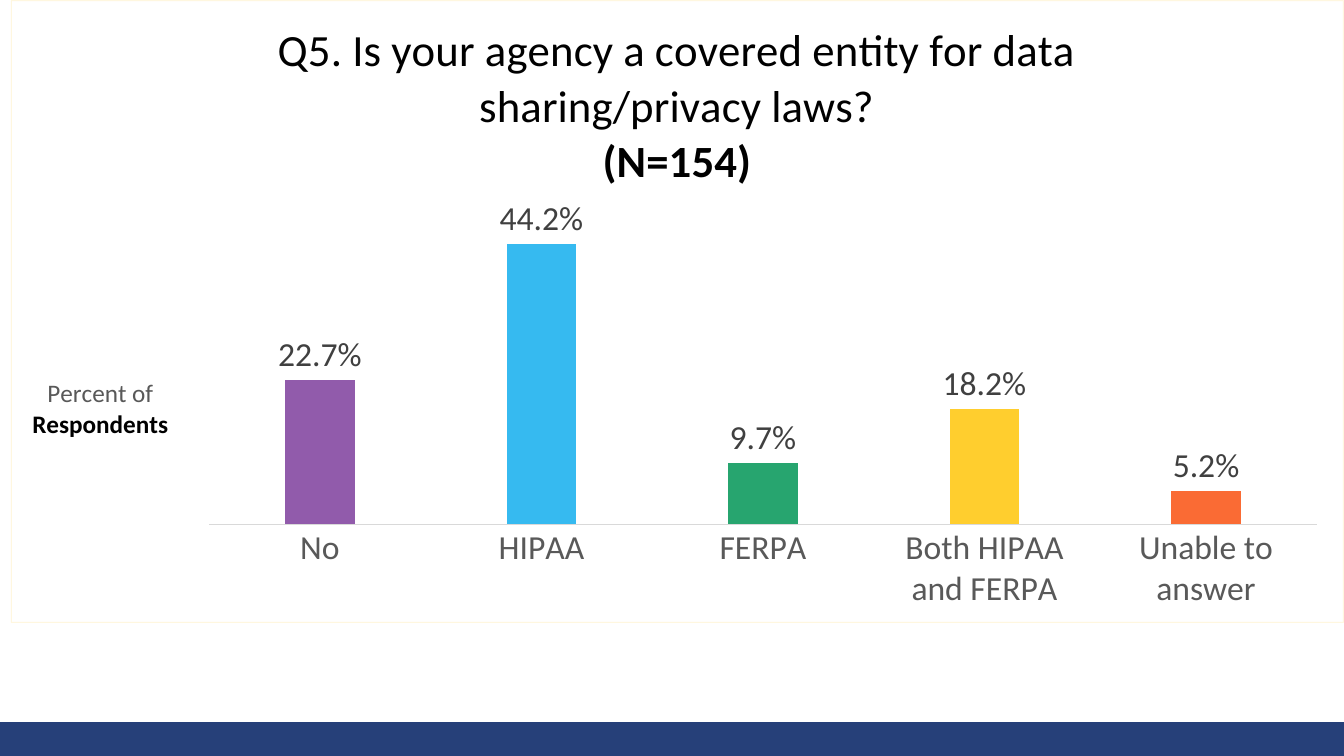
from lxml import etree
from pptx import Presentation
from pptx.chart.data import CategoryChartData
from pptx.dml.color import RGBColor
from pptx.enum.chart import XL_CHART_TYPE, XL_LABEL_POSITION, XL_TICK_MARK
from pptx.enum.shapes import MSO_SHAPE
from pptx.enum.text import PP_ALIGN
from pptx.oxml import parse_xml
from pptx.oxml.ns import nsdecls, qn
from pptx.util import Inches, Pt

COLUMN = XL_CHART_TYPE.COLUMN_CLUSTERED
OUTSIDE = XL_LABEL_POSITION.OUTSIDE_END
NO_TICK = XL_TICK_MARK.NONE
RECT = MSO_SHAPE.RECTANGLE
CENTER = PP_ALIGN.CENTER

WIDTH, HEIGHT = 13.33, 7.5
FONT = "Calibri"
COLORS = {
    "black": "000000", "white": "FFFFFF", "navy": "264079",
    "label": "404040", "axis_text": "595959", "axis_line": "D9D9D9",
    "purple": "915BAB", "blue": "36BAF0", "green": "27A56F",
    "yellow": "FFCE2E", "orange": "FA6B34",
}
ANSWERS = [
    ("No", 0.227, "purple"),
    ("HIPAA", 0.442, "blue"),
    ("FERPA", 0.097, "green"),
    ("Both HIPAA and FERPA", 0.182, "yellow"),
    ("Unable to answer", 0.052, "orange"),
]


def rgb(name):
    return RGBColor.from_string(COLORS[name])


def set_font(font, size, color, bold=False):
    font.name, font.size, font.bold = FONT, Pt(size), bold
    font.color.rgb = rgb(color)


def add_text(tf, text, first=False, **fmt):
    """Write one centred paragraph, formatted by the set_font keywords."""
    p = tf.paragraphs[0] if first else tf.add_paragraph()
    p.alignment = CENTER
    r = p.add_run()
    r.text = text
    set_font(r.font, **fmt)


def place(element, index, **percents):
    """Give a chart part a manual layout in percent of the chart's size."""
    old = element.find(qn("c:layout"))
    if old is not None:
        element.remove(old)
    layout = parse_xml(f"<c:layout {nsdecls('c')}><c:manualLayout/></c:layout>")
    manual = layout[0]
    if "w" in percents:
        etree.SubElement(manual, qn("c:layoutTarget")).set("val", "inner")
    for side in ("x", "y"):
        etree.SubElement(manual, qn(f"c:{side}Mode")).set("val", "edge")
    for key, value in percents.items():
        etree.SubElement(manual, qn(f"c:{key}")).set("val", f"{value / 100:.4f}")
    element.insert(index, layout)


class Slide:
    """Holds the current slide; lengths are percent of the slide's size."""

    def __init__(self, prs):
        self.prs = prs
        self.s = prs.slides.add_slide(prs.slide_layouts[6])

    def box(self, x, y, w, h):
        pw, ph = self.prs.slide_width / 100, self.prs.slide_height / 100
        return int(x * pw), int(y * ph), int(w * pw), int(h * ph)

    def band(self, x, y, w, h, color):
        sp = self.s.shapes.add_shape(RECT, *self.box(x, y, w, h))
        sp.shadow.inherit = False
        sp.fill.solid()
        sp.fill.fore_color.rgb = rgb(color)
        sp.line.color.rgb = rgb(color)
        sp.line.width = Pt(1)

    def column_chart(self, x, y, w, h, answers):
        data = CategoryChartData(number_format="0.0%")
        data.categories = [name for name, _, _ in answers]
        data.add_series("Series 1", [value for _, value, _ in answers])
        frame = self.s.shapes.add_chart(COLUMN, *self.box(x, y, w, h), data)
        chart = frame.chart
        chart.has_legend = False
        set_font(chart.font, 10, "black")
        self.columns(chart.plots[0], answers)
        self.axes(chart)
        self.chart_frame(chart)
        return chart

    def columns(self, plot, answers):
        plot.gap_width, plot.overlap = 219, -27
        plot.vary_by_categories = False
        series = plot.series[0]
        series.format.fill.solid()
        series.format.fill.fore_color.rgb = rgb(answers[0][2])
        for i, (_, _, color) in enumerate(answers[1:], 1):
            fill = series.points[i].format.fill
            fill.solid()
            fill.fore_color.rgb = rgb(color)
        labels = series.data_labels
        labels.show_value = True
        labels.position = OUTSIDE
        labels.number_format = "0.0%"
        labels.number_format_is_linked = False
        set_font(labels.font, 24, "label")

    def axes(self, chart):
        cat, val = chart.category_axis, chart.value_axis
        cat.major_tick_mark = cat.minor_tick_mark = NO_TICK
        cat.format.line.color.rgb = rgb("axis_line")
        cat.format.line.width = Pt(0.75)
        set_font(cat.tick_labels.font, 24, "axis_text")
        val.has_major_gridlines = False
        val.minimum_scale, val.maximum_scale = 0, 0.5
        val.tick_labels.number_format = "0.0%"
        val.tick_labels.number_format_is_linked = False
        val.visible = False

    def chart_frame(self, chart):
        """Fill the chart area and give it a faint border."""
        area = parse_xml(
            f'<c:spPr {nsdecls("c", "a")}>'
            f'<a:solidFill><a:srgbClr val="{COLORS["white"]}"/></a:solidFill>'
            f'<a:ln w="{Pt(0.75)}"><a:solidFill><a:srgbClr val="{COLORS["yellow"]}">'
            '<a:alpha val="14000"/></a:srgbClr></a:solidFill></a:ln></c:spPr>')
        chart.element.find(qn("c:chart")).addnext(area)

    def chart_title(self, title, lines, x, y):
        """Write (text, format) lines into a chart or axis title."""
        for i, (text, fmt) in enumerate(lines):
            add_text(title.text_frame, text, first=i == 0, **fmt)
        body = next(title.element.iter(qn("a:bodyPr")))
        body.set("rot", "0")
        body.set("vert", "horz")
        place(title.element, 1, x=x, y=y)


def main():
    prs = Presentation()
    prs.slide_width, prs.slide_height = Inches(WIDTH), Inches(HEIGHT)
    slide = Slide(prs)
    slide.band(0, 95.6, 100, 4.4, "navy")
    chart = slide.column_chart(0.8, 0, 99.2, 82.4, ANSWERS)
    place(chart.element.find(".//" + qn("c:plotArea")), 0,
          x=14.85, y=33.25, w=83.15, h=50.95)
    slide.chart_title(chart.chart_title, [
        ("Q5. Is your agency a covered entity for data sharing/privacy laws?",
         dict(size=32, color="black")),
        ("(N=154)", dict(size=32, color="black", bold=True)),
    ], x=13.7, y=2.9)
    slide.chart_title(chart.value_axis.axis_title, [
        ("Percent of", dict(size=18, color="axis_text")),
        ("Respondents", dict(size=18, color="black", bold=True)),
    ], x=1.35, y=60)
    prs.save("out.pptx")


if __name__ == "__main__":
    main()
